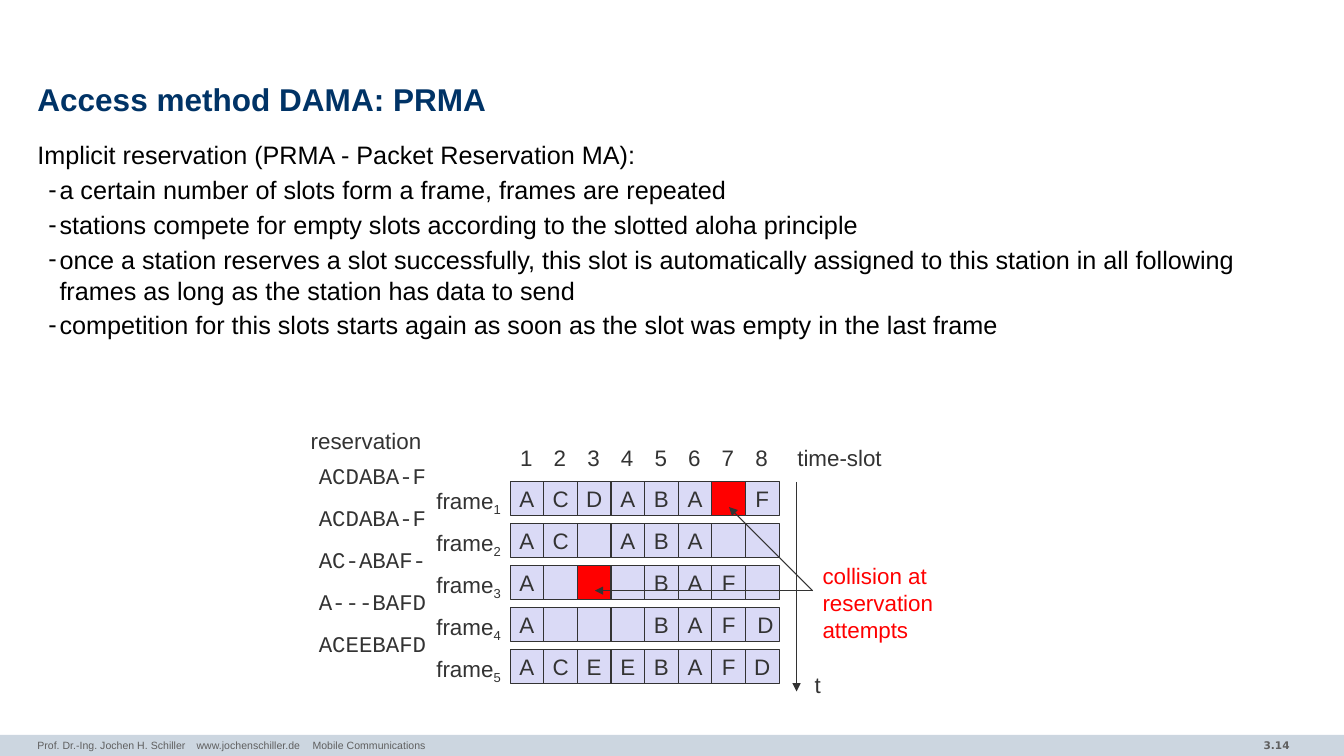
from lxml.etree import SubElement
from pptx import Presentation
from pptx.dml.color import RGBColor
from pptx.enum.shapes import MSO_CONNECTOR, MSO_SHAPE
from pptx.enum.text import MSO_ANCHOR, MSO_AUTO_SIZE, PP_ALIGN
from pptx.oxml.ns import qn
from pptx.util import Inches, Pt

NAVY = RGBColor(0x00, 0x33, 0x66)
BLACK = RGBColor(0x00, 0x00, 0x00)
DARK = RGBColor(0x33, 0x33, 0x33)
GRAY = RGBColor(0x5F, 0x5F, 0x5F)
RED = RGBColor(0xFF, 0x00, 0x00)
LAVENDER = RGBColor(0xDA, 0xDA, 0xF6)
BAND = RGBColor(0xCC, 0xD6, 0xE0)

TITLE_FONT = {"name": "Arial", "size": Pt(22.5), "bold": True, "color": NAVY}
BODY_FONT = {"name": "Arial", "size": Pt(18), "color": BLACK}
LABEL_FONT = {"name": "Arial", "size": Pt(16), "color": DARK}
ALERT_FONT = {**LABEL_FONT, "color": RED}
CODE_FONT = {**LABEL_FONT, "name": "Courier New"}
FOOTER_FONT = {"name": "Arial", "size": Pt(7.5), "color": GRAY}
NUMBER_FONT = {**FOOTER_FONT, "name": "DejaVu Sans", "bold": True}

BODY_ITEMS = [
    "a certain number of slots form a frame, frames are repeated",
    "stations compete for empty slots according to the slotted aloha principle",
    "once a station reserves a slot successfully, this slot is automatically assigned "
    "to this station in all following frames as long as the station has data to send",
    "competition for this slots starts again as soon as the slot was empty in the last frame",
]

# Slot contents of each frame; "!" marks a collision, "-" an empty slot
FRAMES = ["ACDABA!F", "AC-ABA--", "A-!-BAF-", "A---BAFD", "ACEEBAFD"]
RESERVATIONS = ["ACDABA-F", "ACDABA-F", "AC-ABAF-", "A---BAFD", "ACEEBAFD"]
GRID_LEFT, GRID_TOP = 5.06, 4.78
SLOT_SIZE = 1 / 3
FRAME_STEP = 5 / 12


class SlideBuilder:
    def __init__(self, presentation):
        self.slide = presentation.slides.add_slide(presentation.slide_layouts[1])

    def format_paragraph(self, paragraph, font_values, **paragraph_values):
        for key, value in paragraph_values.items():
            setattr(paragraph, key, value)
        for run in paragraph.runs:
            for key, value in font_values.items():
                if key == "color":
                    run.font.color.rgb = value
                else:
                    setattr(run.font, key, value)
        for line_break in paragraph._p.findall(qn("a:br")):
            SubElement(line_break, qn("a:rPr"), sz=str(int(font_values["size"].pt * 100)))

    def format_frame(self, frame, **values):
        for key, value in values.items():
            setattr(frame, key, value)

    def place(self, shape, left, top, width, height):
        shape.left, shape.top = Inches(left), Inches(top)
        shape.width, shape.height = Inches(width), Inches(height)
        self.format_frame(shape.text_frame, margin_left=0, margin_top=0, margin_right=0,
                          margin_bottom=0, auto_size=MSO_AUTO_SIZE.NONE, word_wrap=True)

    def title(self, text):
        shape = self.slide.shapes.title
        self.place(shape, 0.37, 0.78, 12.6, 0.47)
        shape.text_frame.vertical_anchor = MSO_ANCHOR.MIDDLE
        paragraph = shape.text_frame.paragraphs[0]
        paragraph.text = text
        self.format_paragraph(paragraph, TITLE_FONT, alignment=PP_ALIGN.LEFT, line_spacing=0.85)

    def body(self, lead, items):
        shape = self.slide.placeholders[1]
        self.place(shape, 0.37, 1.38, 12.6, 5.71)
        frame = shape.text_frame
        frame.text = lead
        properties = frame.paragraphs[0]._p.get_or_add_pPr()
        properties.set("marL", "0")
        properties.set("indent", "0")
        SubElement(properties, qn("a:buNone"))
        self.format_paragraph(frame.paragraphs[0], BODY_FONT, line_spacing=1.02,
                              space_before=Pt(0))
        for item in items:
            paragraph = frame.add_paragraph()
            paragraph.text = item
            paragraph.level = 1
            properties = paragraph._p.get_or_add_pPr()
            properties.set("marL", str(Inches(0.22)))
            properties.set("indent", str(Inches(-0.11)))
            color = SubElement(properties, qn("a:buClr"))
            SubElement(color, qn("a:srgbClr"), val=str(BLACK))
            SubElement(properties, qn("a:buChar"), char="-")
            self.format_paragraph(paragraph, BODY_FONT, line_spacing=1.02, space_before=Pt(2.8))

    def text(self, text, left, top, width, height, font=LABEL_FONT, subscript="",
             alignment=PP_ALIGN.LEFT, **frame_values):
        shape = self.slide.shapes.add_textbox(
            Inches(left), Inches(top), Inches(width), Inches(height))
        values = {"word_wrap": False, "auto_size": MSO_AUTO_SIZE.SHAPE_TO_FIT_TEXT}
        self.format_frame(shape.text_frame, **{**values, **frame_values})
        paragraph = shape.text_frame.paragraphs[0]
        paragraph.text = text
        if subscript:
            run = paragraph.add_run()
            run.text = subscript
            run._r.get_or_add_rPr().set("baseline", "-25000")
        self.format_paragraph(paragraph, font, alignment=alignment)
        return paragraph

    def centred_text(self, text, left, top, width, font=LABEL_FONT):
        self.text(text, left, top, width, 0.37, font, alignment=PP_ALIGN.CENTER,
                  vertical_anchor=MSO_ANCHOR.MIDDLE)

    def box(self, left, top, width, height, fill, line=None, text=""):
        shape = self.slide.shapes.add_shape(
            MSO_SHAPE.RECTANGLE, Inches(left), Inches(top), Inches(width), Inches(height))
        shape.shadow.inherit = False
        shape.fill.solid()
        shape.fill.fore_color.rgb = fill
        if line is None:
            shape.line.fill.background()
        else:
            shape.line.color.rgb = line
            shape.line.width = Pt(0.75)
        if text:
            self.format_frame(shape.text_frame, word_wrap=False,
                              vertical_anchor=MSO_ANCHOR.MIDDLE)
            paragraph = shape.text_frame.paragraphs[0]
            paragraph.text = text
            self.format_paragraph(paragraph, LABEL_FONT, alignment=PP_ALIGN.CENTER)

    def arrow(self, start, end):
        connector = self.slide.shapes.add_connector(
            MSO_CONNECTOR.STRAIGHT, *(Inches(value) for value in start + end))
        connector.line.color.rgb = DARK
        connector.line.width = Pt(0.75)
        SubElement(connector.line._get_or_add_ln(), qn("a:tailEnd"), type="triangle")
        SubElement(connector._element.spPr, qn("a:effectLst"))


def main():
    presentation = Presentation()
    presentation.slide_width, presentation.slide_height = Inches(13.33), Inches(7.5)
    builder = SlideBuilder(presentation)

    # Footer band
    builder.box(0, 7.29, 13.33, 0.21, BAND)
    builder.text("3.14", 11.1, 7.28, 1.79, 0.23, NUMBER_FONT, alignment=PP_ALIGN.RIGHT,
                 word_wrap=True, auto_size=MSO_AUTO_SIZE.NONE,
                 vertical_anchor=MSO_ANCHOR.MIDDLE)
    footer = builder.text(
        "Prof. Dr.-Ing. Jochen H. Schiller\twww.jochenschiller.de\tMobile Communications",
        0.37, 7.28, 8.72, 0.22, FOOTER_FONT, margin_left=0, margin_right=0,
        word_wrap=True, auto_size=MSO_AUTO_SIZE.NONE)
    tab_list = SubElement(footer._p.get_or_add_pPr(), qn("a:tabLst"))
    for position in (1.58, 2.73):
        SubElement(tab_list, qn("a:tab"), pos=str(Inches(position)), algn="l")

    # Title and list
    builder.title("Access method DAMA: PRMA")
    builder.body("Implicit reservation (PRMA - Packet Reservation MA):", BODY_ITEMS)

    # Time-slot header
    for slot in range(8):
        builder.text(str(slot + 1), GRID_LEFT + slot * SLOT_SIZE, 4.36, 0.32, 0.37)
    builder.text("time-slot", 7.81, 4.36, 1.05, 0.37)

    # Frames with their slots and reservations
    builder.centred_text("reservation", 2.98, 4.19, 1.3)
    for row, (slots, reservation) in enumerate(zip(FRAMES, RESERVATIONS)):
        top = GRID_TOP + row * FRAME_STEP
        builder.centred_text(reservation, 3.06, top - 0.25, 1.27, CODE_FONT)
        builder.text("frame", 4.23, top, 0.85, 0.36, subscript=str(row + 1))
        for column, station in enumerate(slots):
            label = "" if station in "-!" else station
            if (row, column) == (3, 7):
                label = " D"
            builder.box(GRID_LEFT + column * SLOT_SIZE, top, SLOT_SIZE, SLOT_SIZE,
                        RED if station == "!" else LAVENDER, DARK, label)

    # Collision note and time axis
    builder.text("collision at\vreservation\vattempts", 8.06, 5.53, 1.37, 0.91, ALERT_FONT)
    for collision in ((7.23, 5.03), (5.9, 5.86)):
        builder.arrow((8.06, 5.86), collision)
    builder.arrow((7.9, 4.78), (7.9, 6.86))
    builder.centred_text("t", 7.98, 6.61, 0.26)

    presentation.save("out.pptx")


if __name__ == "__main__":
    main()
